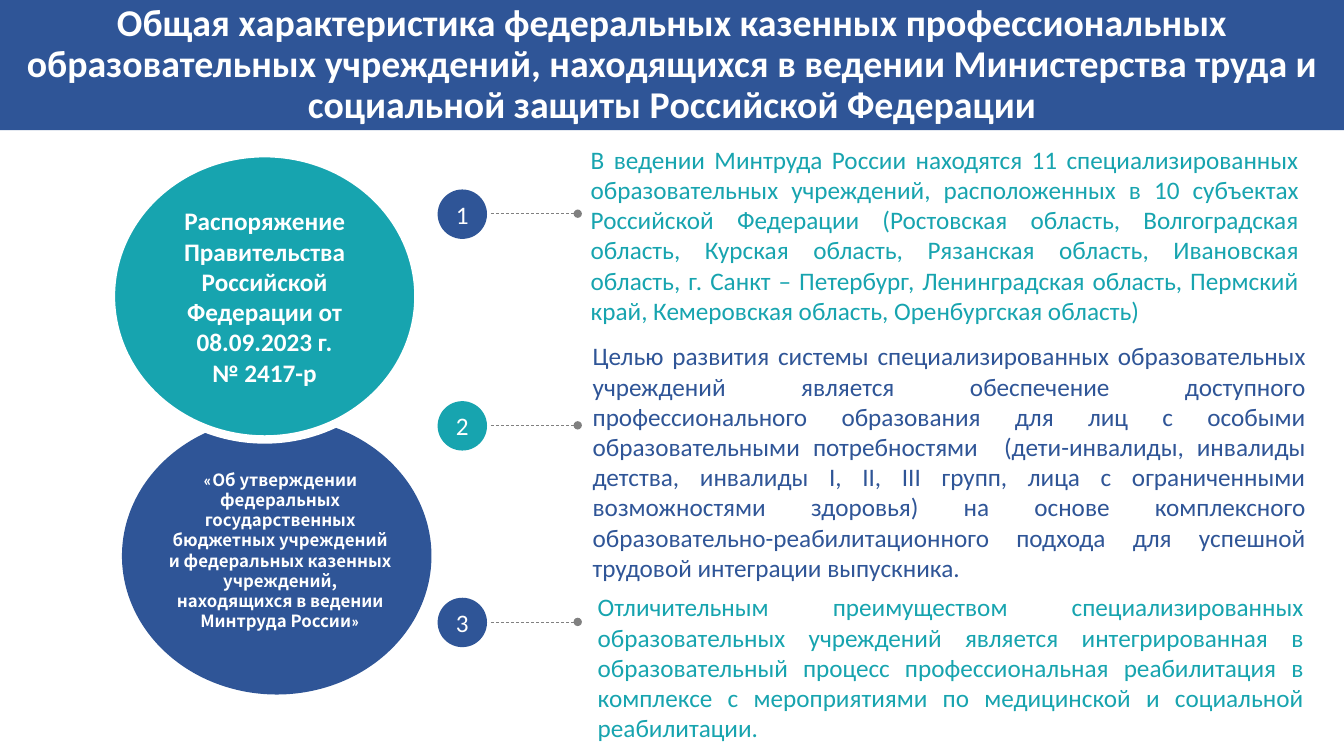
from lxml import etree
from pptx import Presentation
from pptx.dml.color import RGBColor
from pptx.enum.dml import MSO_LINE
from pptx.enum.shapes import MSO_CONNECTOR, MSO_SHAPE
from pptx.enum.text import MSO_ANCHOR, PP_ALIGN
from pptx.oxml.ns import qn
from pptx.util import Pt

BLUE = RGBColor(0x2F, 0x55, 0x97)
TEAL = RGBColor(0x17, 0xA4, 0xAF)
GRAY = RGBColor(0x80, 0x80, 0x80)
WHITE = RGBColor(0xFF, 0xFF, 0xFF)
RECT, OVAL = MSO_SHAPE.RECTANGLE, MSO_SHAPE.OVAL
STRAIGHT, DASH = MSO_CONNECTOR.STRAIGHT, MSO_LINE.DASH
TOP, MIDDLE = MSO_ANCHOR.TOP, MSO_ANCHOR.MIDDLE
CENTER, JUSTIFY = PP_ALIGN.CENTER, PP_ALIGN.JUSTIFY
SCALE = 9144  # EMU in one px, 100 px to the inch


def px(*values):
    return [v * SCALE for v in values]


class Deck:
    font = "Calibri"
    caption_font = "Noto Sans CJK SC"

    def __init__(self, width, height):
        self.prs = Presentation()
        self.prs.slide_width, self.prs.slide_height = px(width, height)
        self.s = self.prs.slides.add_slide(self.prs.slide_layouts[6])

    def shape(self, kind, box, fill, outline=None):
        sp = self.s.shapes.add_shape(kind, *px(*box))
        sp.shadow.inherit = False
        sp.fill.solid()
        sp.fill.fore_color.rgb = fill
        if outline:
            sp.line.color.rgb = WHITE
            sp.line.width = Pt(outline)
        else:
            sp.line.fill.background()
        return sp

    def label(self, sp, paragraphs, size, color=WHITE, bold=False,
              align=CENTER, anchor=MIDDLE, spacing=None, inset=None):
        """Each paragraph is a list of (text, font) runs."""
        tf = sp.text_frame
        tf.word_wrap = True
        tf.vertical_anchor = anchor
        if inset is not None:
            tf.margin_left = tf.margin_right = inset * SCALE
            tf.margin_top = tf.margin_bottom = inset * SCALE
        for i, runs in enumerate(paragraphs):
            p = tf.add_paragraph() if i else tf.paragraphs[0]
            p.alignment = align
            if spacing:
                p.line_spacing = spacing
            for text, font in runs:
                r = p.add_run()
                r.text = text
                r.font.name = font
                r.font.size = Pt(size)
                r.font.bold = bold
                r.font.color.rgb = color

    def text(self, box, paragraphs, size, **style):
        sp = self.s.shapes.add_textbox(*px(*box))
        self.label(sp, paragraphs, size, anchor=TOP, **style)

    def pointer(self, x1, x2, y):
        c = self.s.shapes.add_connector(STRAIGHT, *px(x1, y, x2, y))
        c.line.color.rgb = GRAY
        c.line.width = Pt(0.5)
        c.line.dash_style = DASH
        props = c._element.spPr
        etree.SubElement(props.find(qn("a:ln")), qn("a:tailEnd"), type="oval")
        etree.SubElement(props, qn("a:effectLst"))


def main():
    d = Deck(1333, 750)
    main_font = d.font

    # Lower circle with its caption
    d.shape(OVAL, (121, 414, 307, 275), BLUE)
    d.text((166, 466, 224, 162), [[
        ("«", main_font),
        ("Об утверждении федеральных государственных бюджетных учреждений "
         "и федеральных казенных учреждений, находящихся в ведении "
         "Минтруда России", d.caption_font),
        ("»", main_font),
    ]], 12, bold=True, spacing=Pt(14.4), inset=0)

    # Upper circle overlapping the lower one
    order = d.shape(OVAL, (110, 152, 305, 284), TEAL, outline=6)
    d.label(order, [
        [("Распоряжение Правительства Российской Федерации от 08.09.2023 г.",
          main_font)],
        [("№ 2417-р", main_font)],
    ], 18, bold=True)

    # Numbered points: badge top, badge colour, text box, text colour, text
    points = [
        (188, BLUE, (576, 138, 722, 190), TEAL,
         "В ведении Минтруда России находятся 11 специализированных "
         "образовательных учреждений, расположенных в 10 субъектах Российской "
         "Федерации (Ростовская область, Волгоградская область, Курская "
         "область, Рязанская область, Ивановская область, г. Санкт – "
         "Петербург, Ленинградская область, Пермский край, Кемеровская "
         "область, Оренбургская область)"),
        (398, TEAL, (578, 333, 727, 250), BLUE,
         "Целью развития системы специализированных образовательных "
         "учреждений является обеспечение доступного профессионального "
         "образования для лиц с особыми образовательными потребностями  "
         "(дети-инвалиды, инвалиды детства, инвалиды I, II, III групп, лица "
         "с ограниченными возможностями здоровья) на основе комплексного "
         "образовательно-реабилитационного подхода для успешной трудовой "
         "интеграции выпускника."),
        (593, BLUE, (583, 582, 720, 160), TEAL,
         "Отличительным преимуществом специализированных образовательных "
         "учреждений является интегрированная в образовательный процесс "
         "профессиональная реабилитация в комплексе с мероприятиями по "
         "медицинской и социальной реабилитации."),
    ]
    badge_size = 49
    for number, (top, fill, box, color, text) in enumerate(points, 1):
        badge = d.shape(OVAL, (434, top, badge_size, badge_size), fill)
        d.label(badge, [[(str(number), main_font)]], 18, inset=0)
        d.pointer(487, 573, top + badge_size // 2)
        d.text(box, [[(text, main_font)]], 18, color=color, align=JUSTIFY)

    # Title band
    band = d.shape(RECT, (0, 0, 1333, 129), BLUE)
    d.label(band, [[
        ("Общая характеристика федеральных казенных профессиональных "
         "образовательных учреждений, находящихся в ведении Министерства "
         "труда и социальной защиты Российской Федерации", main_font),
    ]], 27, bold=True, spacing=0.9)

    d.prs.save("out.pptx")


if __name__ == "__main__":
    main()
